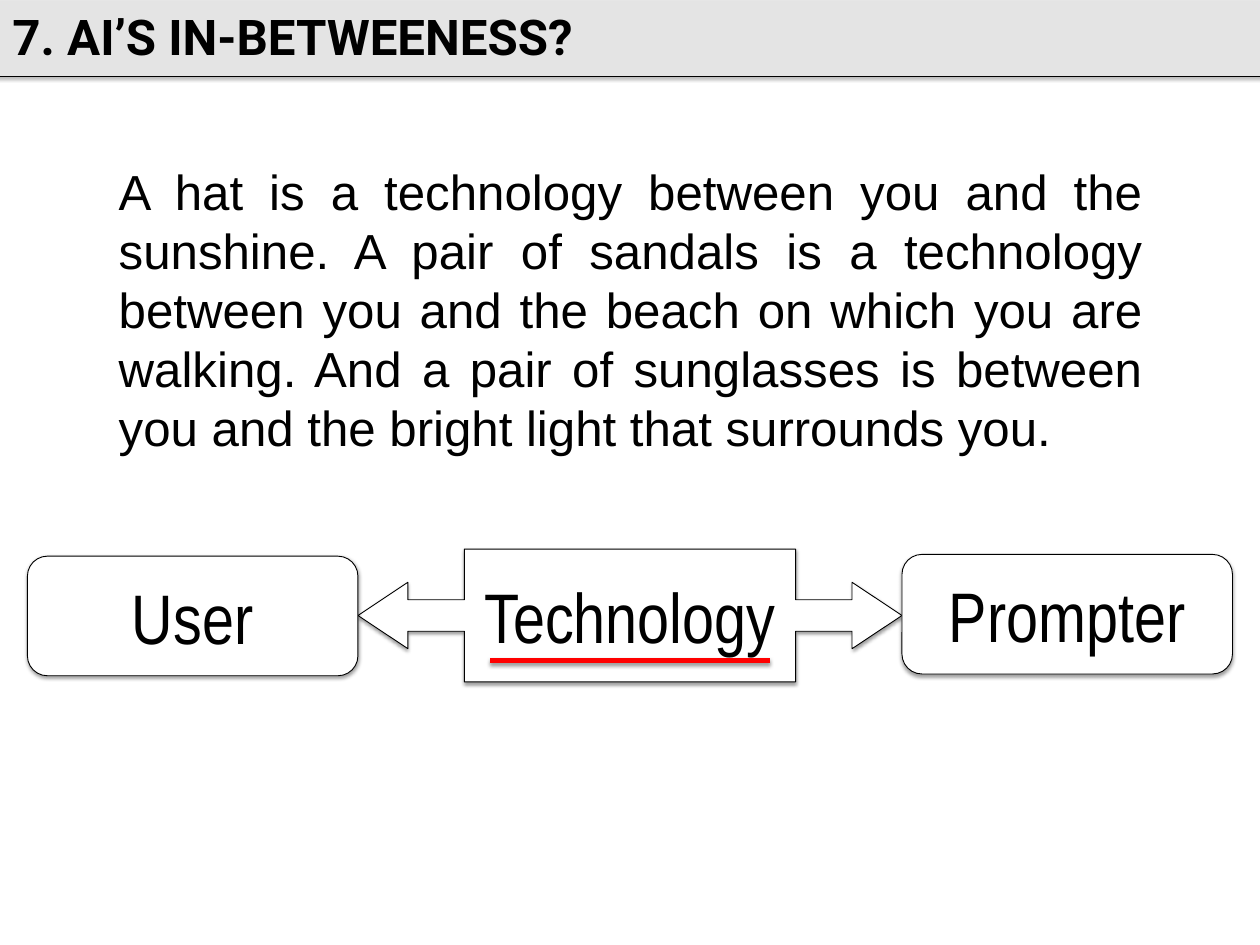
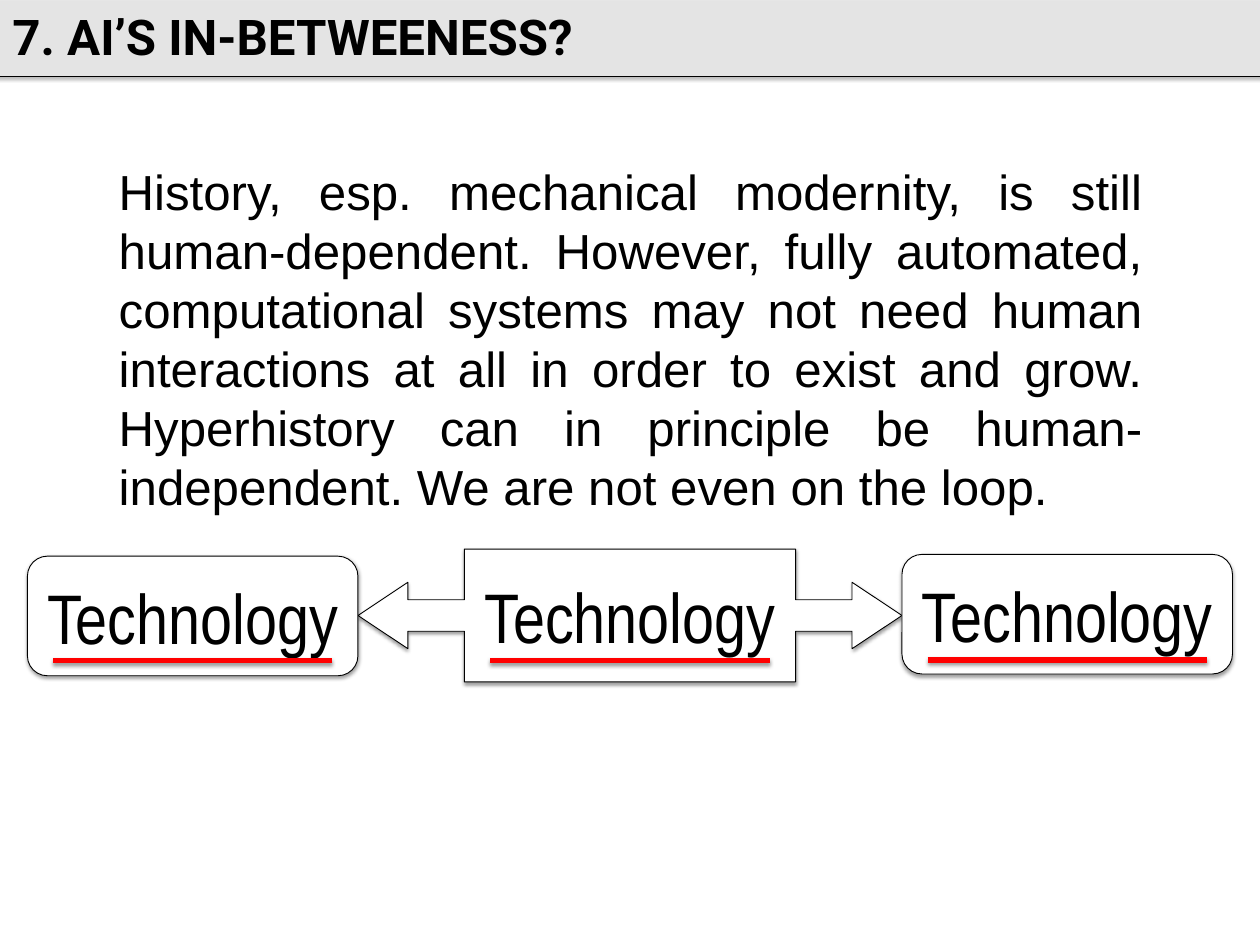
from lxml import etree
from pptx import Presentation
from pptx import util as u
from pptx.dml.color import RGBColor
from pptx.enum import shapes, text
from pptx.oxml import ns

W, H = 14.22, 10.67
BLACK, WHITE, RED, BAND = "000000", "FFFFFF", "FF0000", "F2F2F2"
TITLE = "7. AI’S IN-BETWEENESS?"

# Diagram columns: card | hub with arrows | card
MARGIN, CARD_W, CARD_H, HUB_H = 0.31, 3.73, 1.35, 1.5
HUB_LEFT = MARGIN + CARD_W
HUB_W = W - 2 * HUB_LEFT
HUB_TOP = 6.2
UNDERLINE_W = 3.15

ROUND = shapes.MSO_SHAPE.ROUNDED_RECTANGLE
HUB = shapes.MSO_SHAPE.LEFT_RIGHT_ARROW_CALLOUT

# preset, left, top, width, height, underline height
places = [
    (HUB, HUB_LEFT, HUB_TOP, HUB_W, HUB_H, 7.46),
    (ROUND, W - HUB_LEFT, 6.26, CARD_W, CARD_H, 7.45),
    (ROUND, MARGIN, 6.28, CARD_W, CARD_H, 7.46),
]

# statement, its box height, labels in the order of places
pages = [
    ("A hat is a technology between you and the sunshine. A pair of sandals is a "
     "technology between you and the beach on which you are walking. And a pair of "
     "sunglasses is between you and the bright light that surrounds you.",
     3.51, ["Technology", "Prompter", "User"]),
    ("History, esp. mechanical modernity, is still human-dependent. However, fully "
     "automated, computational systems may not need human interactions at all in "
     "order to exist and grow. Hyperhistory can in principle be human-independent. "
     "We are not even on the loop.",
     4.18, ["Technology"] * 3),
]


def paint(shape, line, width, fill=None, shade=38, distance=1.6):
    """Set line, optional fill and a soft shadow falling straight down."""
    shape.line.color.rgb = RGBColor.from_string(line)
    shape.line.width = u.Pt(width)
    if fill:
        shape.fill.solid()
        shape.fill.fore_color.rgb = RGBColor.from_string(fill)
    effects = etree.SubElement(shape._element.spPr, ns.qn("a:effectLst"))
    shadow = etree.SubElement(
        effects, ns.qn("a:outerShdw"), blurRad=str(u.Pt(3.1)),
        dist=str(u.Pt(distance)), dir="5400000", rotWithShape="0")
    tone = etree.SubElement(shadow, ns.qn("a:srgbClr"), val=BLACK)
    etree.SubElement(tone, ns.qn("a:alpha"), val=str(shade * 1000))


def write(shape, words, font, size, align, wrap=True, bold=False):
    """Put one paragraph into a shape and return the paragraph."""
    frame = shape.text_frame
    frame.word_wrap = wrap
    frame.margin_left = frame.margin_right = u.Inches(0.14)
    frame.margin_top = frame.margin_bottom = u.Inches(0.07)
    paragraph = frame.paragraphs[0]
    paragraph.text = words
    paragraph.alignment = align
    paragraph.font.name = font
    paragraph.font.size = u.Pt(size)
    paragraph.font.bold = bold
    paragraph.font.color.rgb = RGBColor.from_string(BLACK)
    return paragraph


deck = Presentation()
deck.slide_width, deck.slide_height = u.Inches(W), u.Inches(H)

for statement, statement_h, labels in pages:
    parts = deck.slides.add_slide(deck.slide_layouts[6]).shapes

    # Diagram boxes
    for (preset, left, top, width, height, _), label in zip(places, labels):
        box = parts.add_shape(preset, *map(u.Inches, (left, top, width, height)))
        if preset == HUB:
            for i, share in enumerate((0.237, 0.25, 0.376, 0.609)):
                box.adjustments[i] = share
        paint(box, BLACK, 0.75, WHITE)
        write(box, label, "Arial Narrow", 57, text.PP_ALIGN.CENTER)
        box.text_frame.vertical_anchor = text.MSO_ANCHOR.MIDDLE

    # Title band, bleeding over the slide edges
    band = parts.add_shape(shapes.MSO_SHAPE.RECTANGLE,
                           *map(u.Inches, (-1.01, -0.04, 17.64, 0.9)))
    paint(band, BLACK, 0.25, BAND, shade=35, distance=1.8)
    tint = band._element.spPr.find(ns.qn("a:solidFill"))[0]
    etree.SubElement(tint, ns.qn("a:alpha"), val="75000")
    title = parts.add_textbox(0, 0, u.Inches(7.15), u.Inches(0.82))
    write(title, TITLE, "Roboto", 40, text.PP_ALIGN.LEFT, wrap=False, bold=True)

    # Statement
    body = parts.add_textbox(*map(u.Inches, (1.2, 1.75, 11.83, statement_h)))
    paragraph = write(body, statement, "Arial", 40, text.PP_ALIGN.JUSTIFY)
    paragraph.space_before = paragraph.space_after = u.Pt(8.5)

    # Red underline, centred below each "Technology"
    for (_, left, _, width, _, y), label in zip(places, labels):
        if label == "Technology":
            start = left + (width - UNDERLINE_W) / 2
            underline = parts.add_connector(
                shapes.MSO_CONNECTOR.STRAIGHT,
                *map(u.Inches, (start, y, start + UNDERLINE_W, y)))
            paint(underline, RED, 4.5)

deck.save("out.pptx")
